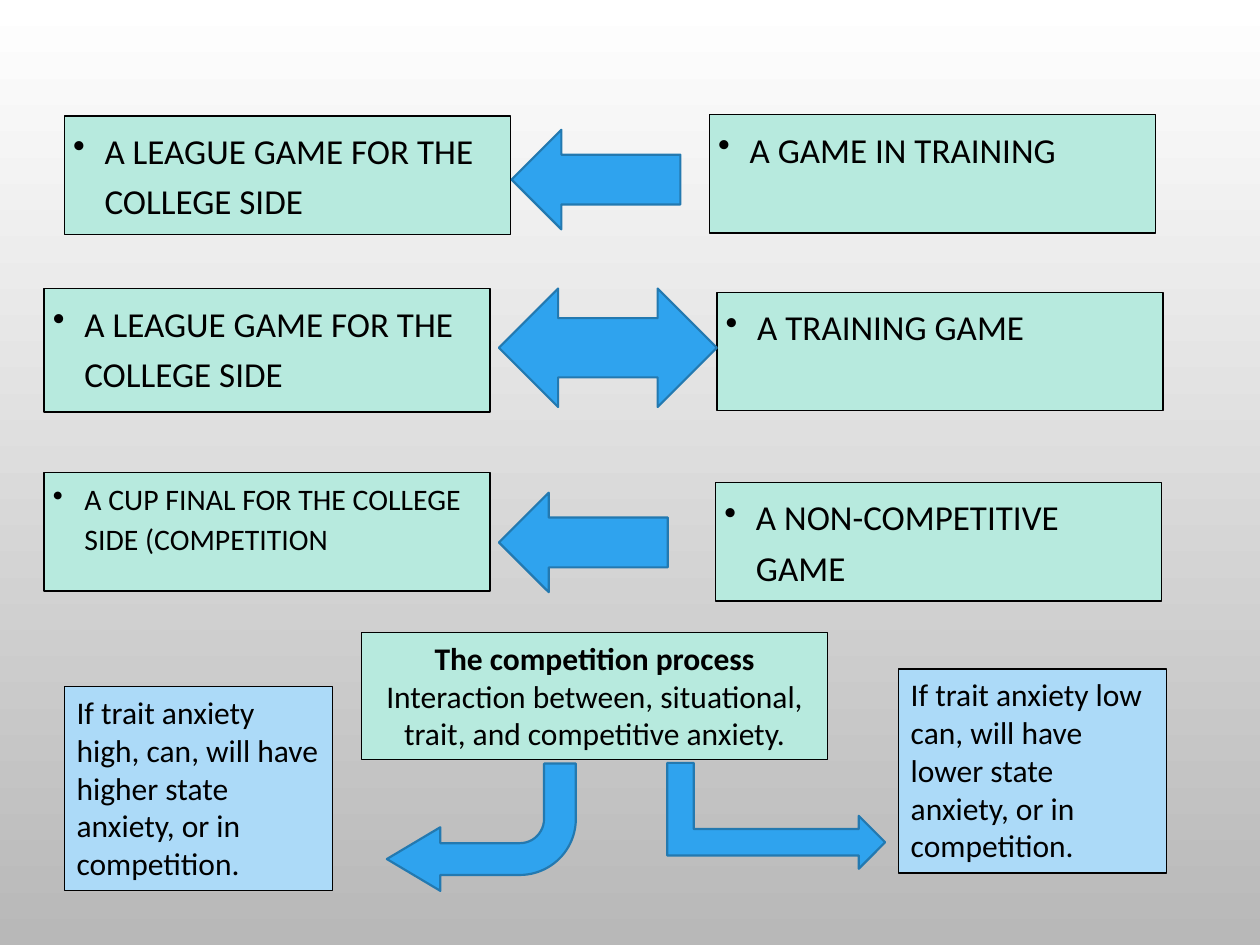
"""Builds the competition and anxiety slide with its paired game boxes and arrows."""
import pptx
import pptx.dml.color
import pptx.enum.shapes
import pptx.enum.text
import pptx.util
import lxml.etree
from pptx.util import Inches

SHAPES = pptx.enum.shapes.MSO_SHAPE
ALIGN = pptx.enum.text.PP_ALIGN
MINT, SKY, BLUE, DARK_BLUE, BLACK = "B7EADE", "ACDAF8", "2FA3EE", "2379B0", "000000"


def color(value):
    return pptx.dml.color.RGBColor.from_string(value)


def add_block(preset, place, fill, line, width, rotation=0):
    block = slide.shapes.add_shape(preset, *[Inches(length) for length in place])
    block.shadow.inherit = False
    block.rotation = rotation
    block.fill.solid()
    block.fill.fore_color.rgb = color(fill)
    block.line.color.rgb = color(line)
    block.line.width = pptx.util.Pt(width)
    block.text_frame.word_wrap = True
    return block


presentation = pptx.Presentation()
presentation.slide_width, presentation.slide_height = Inches(10), Inches(7.5)
slide = presentation.slides.add_slide(presentation.slide_layouts[6])

backdrop = slide.background.fill
backdrop.gradient()
backdrop.gradient_angle = 270
for stop, shade in zip(backdrop.gradient_stops, ("FFFFFF", "B8B8B8")):
    stop.color.rgb = color(shade)

games = [
    (0.51, 0.92, 0.94, "A LEAGUE GAME FOR THE COLLEGE SIDE", 20, 1.2),
    (5.63, 0.91, 0.94, "A GAME IN TRAINING", 20, 1.2),
    (0.35, 2.29, 0.98, "A LEAGUE GAME FOR THE COLLEGE SIDE", 20, 1.2),
    (5.69, 2.32, 0.94, "A TRAINING GAME", 20, 1.2),
    (0.35, 3.75, 0.94, "A CUP FINAL FOR THE COLLEGE SIDE (COMPETITION", 17, 1.1),
    (5.68, 3.83, 0.94, "A NON-COMPETITIVE GAME", 20, 1.2),
]
for left, top, height, wording, size, spacing in games:
    frame = add_block(SHAPES.RECTANGLE, (left, top, 3.54, height), MINT, BLACK, 0.75).text_frame
    frame.vertical_anchor = pptx.enum.text.MSO_ANCHOR.TOP
    frame.margin_left = frame.margin_right = Inches(0.07)
    frame.margin_top = frame.margin_bottom = Inches(0.04)
    game = frame.paragraphs[0]
    game.text = wording
    game.alignment = ALIGN.LEFT
    game.line_spacing = spacing
    properties = game._p.get_or_add_pPr()
    properties.set("marL", str(Inches(0.25)))
    properties.set("indent", str(Inches(-0.25)))
    bullet = lxml.etree.SubElement(properties, pptx.oxml.ns.qn("a:buChar"))
    bullet.set("char", "•")
    game.font.name = "Calibri"
    game.font.size = pptx.util.Pt(size)
    game.font.color.rgb = color(BLACK)

arrows = [
    (SHAPES.RIGHT_ARROW, (4.06, 1.03, 1.34, 0.79), 180, ()),
    (SHAPES.LEFT_RIGHT_ARROW, (3.96, 2.29, 1.73, 0.94), 0, ()),
    (SHAPES.RIGHT_ARROW, (3.96, 3.91, 1.34, 0.79), 180, ()),
    (SHAPES.BENT_ARROW, (3.07, 6.06, 1.5, 1.01), 180, (0.25, 0.25, 0.42, 0.44)),
    (SHAPES.BENT_UP_ARROW, (5.74, 5.61, 0.84, 1.73), 90, ()),
]
for preset, place, rotation, adjustments in arrows:
    arrow = add_block(preset, place, BLUE, DARK_BLUE, 1.25, rotation)
    for index, adjustment in enumerate(adjustments):
        arrow.adjustments[index] = adjustment

explanations = [
    ((2.87, 5.02, 3.7, 1.01), MINT, ALIGN.CENTER,
     ["The competition process",
      "Interaction between, situational, trait, and competitive anxiety."]),
    ((0.51, 5.45, 2.13, 1.62), SKY, ALIGN.LEFT,
     ["If trait anxiety high, can, will have higher state anxiety, or in competition."]),
    ((7.13, 5.31, 2.13, 1.62), SKY, ALIGN.LEFT,
     ["If trait anxiety low can, will have lower state anxiety, or in competition."]),
]
for place, fill, alignment, wording in explanations:
    frame = add_block(SHAPES.RECTANGLE, place, fill, BLACK, 0.75).text_frame
    frame.vertical_anchor = pptx.enum.text.MSO_ANCHOR.TOP
    frame.auto_size = pptx.enum.text.MSO_AUTO_SIZE.SHAPE_TO_FIT_TEXT
    frame.text = "\n".join(wording)
    for statement in frame.paragraphs:
        statement.alignment = alignment
        statement.font.name = "Calibri"
        statement.font.size = pptx.util.Pt(18)
        statement.font.bold = statement.text == "The competition process"
        statement.font.color.rgb = color(BLACK)

presentation.save("out.pptx")
